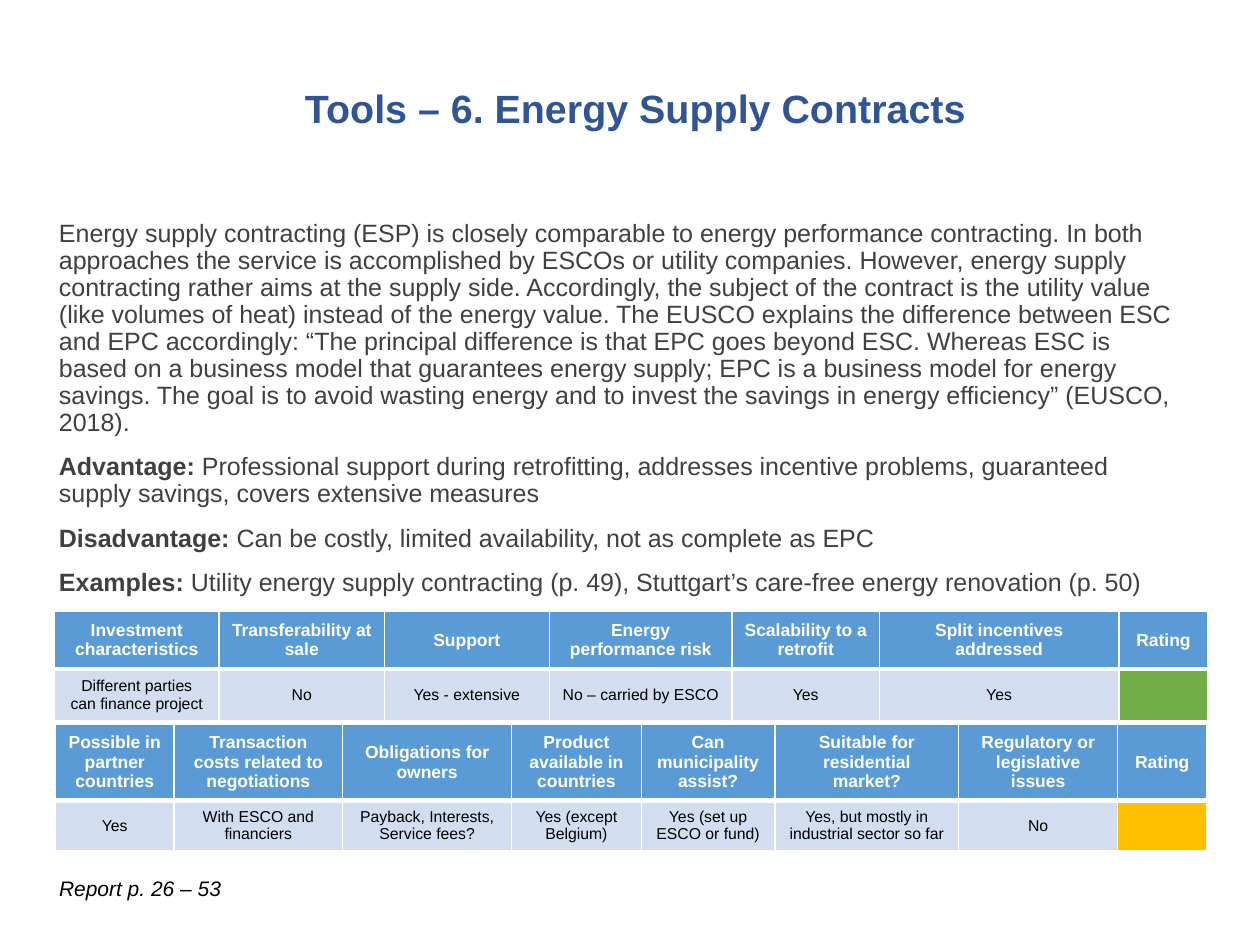
from lxml import etree
from pptx import Presentation
from pptx import util as u
from pptx.dml.color import RGBColor
from pptx.enum import text
from pptx.oxml.ns import qn

WHITE = RGBColor(0xFF, 0xFF, 0xFF)
BLACK = RGBColor(0, 0, 0)
GREY = RGBColor(0x40, 0x40, 0x40)
NAVY = RGBColor(0x2F, 0x55, 0x97)
BLUE = RGBColor(0x5B, 0x9B, 0xD5)
PALE = RGBColor(0xD2, 0xDE, 0xEF)
GREEN = RGBColor(0x70, 0xAD, 0x47)
AMBER = RGBColor(0xFF, 0xC0, 0x00)

TITLE = "Tools – 6. Energy Supply Contracts"
BODY = [
    ("", "Energy supply contracting (ESP) is closely comparable to energy performance "
         "contracting. In both approaches the service is accomplished by ESCOs or utility "
         "companies. However, energy supply contracting rather aims at the supply side. "
         "Accordingly, the subject of the contract is the utility value (like volumes of heat) "
         "instead of the energy value. The EUSCO explains the difference between ESC and EPC "
         "accordingly: “The principal difference is that EPC goes beyond ESC. Whereas ESC is "
         "based on a business model that guarantees energy supply; EPC is a business model for "
         "energy savings. The goal is to avoid wasting energy and to invest the savings in "
         "energy efficiency” (EUSCO, 2018)."),
    ("Advantage:", " Professional support during retrofitting, addresses incentive problems, "
                   "guaranteed supply savings, covers extensive measures"),
    ("Disadvantage:", " Can be costly, limited availability, not as complete as EPC"),
    ("Examples:", " Utility energy supply contracting (p. 49), "
                  "Stuttgart’s care-free energy renovation (p. 50)"),
]
REPORT = "Report p. 26 – 53"
TABLES = [
    dict(left=0.43, top=4.85, rows=(0.46, 0.41), rating=GREEN, columns=[
        (1.31, "Investment characteristics", "Different parties can finance project"),
        (1.31, "Transferability at sale", "No"),
        (1.31, "Support", "Yes - extensive"),
        (1.45, "Energy performance risk", "No – carried by ESCO"),
        (1.17, "Scalability to a retrofit", "Yes"),
        (1.9, "Split incentives addressed", "Yes"),
        (0.71, "Rating", ""),
    ]),
    dict(left=0.44, top=5.75, rows=(0.6, 0.4), rating=AMBER, columns=[
        (0.94, "Possible in partner countries", "Yes"),
        (1.34, "Transaction costs related to negotiations", "With ESCO and financiers"),
        (1.34, "Obligations for owners", "Payback, Interests, Service fees?"),
        (1.03, "Product available in countries", "Yes (except Belgium)"),
        (1.06, "Can municipality assist?", "Yes (set up ESCO or fund)"),
        (1.46, "Suitable for residential market?", "Yes, but mostly in industrial sector so far"),
        (1.26, "Regulatory or legislative issues", "No"),
        (0.71, "Rating", ""),
    ]),
]
HEAD = dict(size=u.Pt(10), bold=True)
CELL = dict(size=u.Pt(9), bold=False)


def style(font, color, **values):
    for name, value in dict(values, name="Arial").items():
        setattr(font, name, value)
    font.color.rgb = color


def place(sp, *box):
    for name, value in zip(("left", "top", "width", "height"), box):
        setattr(sp, name, u.Inches(value))


def add_box(s, *box):
    tf = s.shapes.add_textbox(*map(u.Inches, box)).text_frame
    tf.word_wrap = True
    return tf


def add_borders(cell, bottom):
    tcPr = cell._tc.get_or_add_tcPr()
    for i, (side, width) in enumerate(zip(("lnL", "lnR", "lnT", "lnB"), (1, 1, 1, bottom))):
        ln = etree.Element(qn("a:" + side), w=str(u.Pt(width)))
        fill = etree.SubElement(ln, qn("a:solidFill"))
        etree.SubElement(fill, qn("a:srgbClr"), val=str(WHITE))
        tcPr.insert(i, ln)


def fill_cell(cell, words, fill, color, font, bottom):
    cell.fill.solid()
    cell.fill.fore_color.rgb = fill
    cell.vertical_anchor = text.MSO_ANCHOR.MIDDLE
    p = cell.text_frame.paragraphs[0]
    p.alignment = text.PP_ALIGN.CENTER
    style(p.font, color, **font)
    if words:
        r = p.add_run()
        r.text = words
        style(r.font, color, **font)
    add_borders(cell, bottom)


def add_criteria(s, left, top, rows, rating, columns):
    widths = [c[0] for c in columns]
    box = map(u.Inches, (left, top, sum(widths), sum(rows)))
    table = s.shapes.add_table(len(rows), len(columns), *box).table
    for row, height in zip(table.rows, rows):
        row.height = u.Inches(height)
    for i, (width, head, answer) in enumerate(columns):
        table.columns[i].width = u.Inches(width)
        fill_cell(table.cell(0, i), head, BLUE, WHITE, HEAD, 3)
        fill_cell(table.cell(1, i), answer, PALE if answer else rating, BLACK, CELL, 1)


def main():
    """Build the energy supply contracts slide."""
    prs = Presentation()
    prs.slide_width, prs.slide_height = u.Inches(10), u.Inches(7.5)
    s = prs.slides.add_slide(prs.slide_layouts[5])

    place(s.shapes.title, 2.32, 0.6, 6.28, 0.56)
    tf = s.shapes.title.text_frame
    tf.text = TITLE
    tf.vertical_anchor = text.MSO_ANCHOR.MIDDLE
    p = tf.paragraphs[0]
    p.alignment, p.line_spacing = text.PP_ALIGN.LEFT, 0.9
    style(p.runs[0].font, NAVY, size=u.Pt(22.5), bold=True)

    tf = add_box(s, 0.37, 1.7, 9.04, 3.15)
    for i, parts in enumerate(BODY):
        p = tf.add_paragraph() if i else tf.paragraphs[0]
        p.line_spacing, p.space_before = 0.9, u.Pt(10 if i else 0)
        for words, bold in zip(parts, (True, False)):
            if words:
                r = p.add_run()
                r.text = words
                style(r.font, GREY, size=u.Pt(14.3), bold=bold)

    tf = add_box(s, 0.37, 6.9, 2.32, 0.3)
    tf.text = REPORT
    style(tf.paragraphs[0].runs[0].font, BLACK, size=u.Pt(12), italic=True)

    for criteria in TABLES:
        add_criteria(s, **criteria)
    prs.save("out.pptx")


if __name__ == "__main__":
    main()
